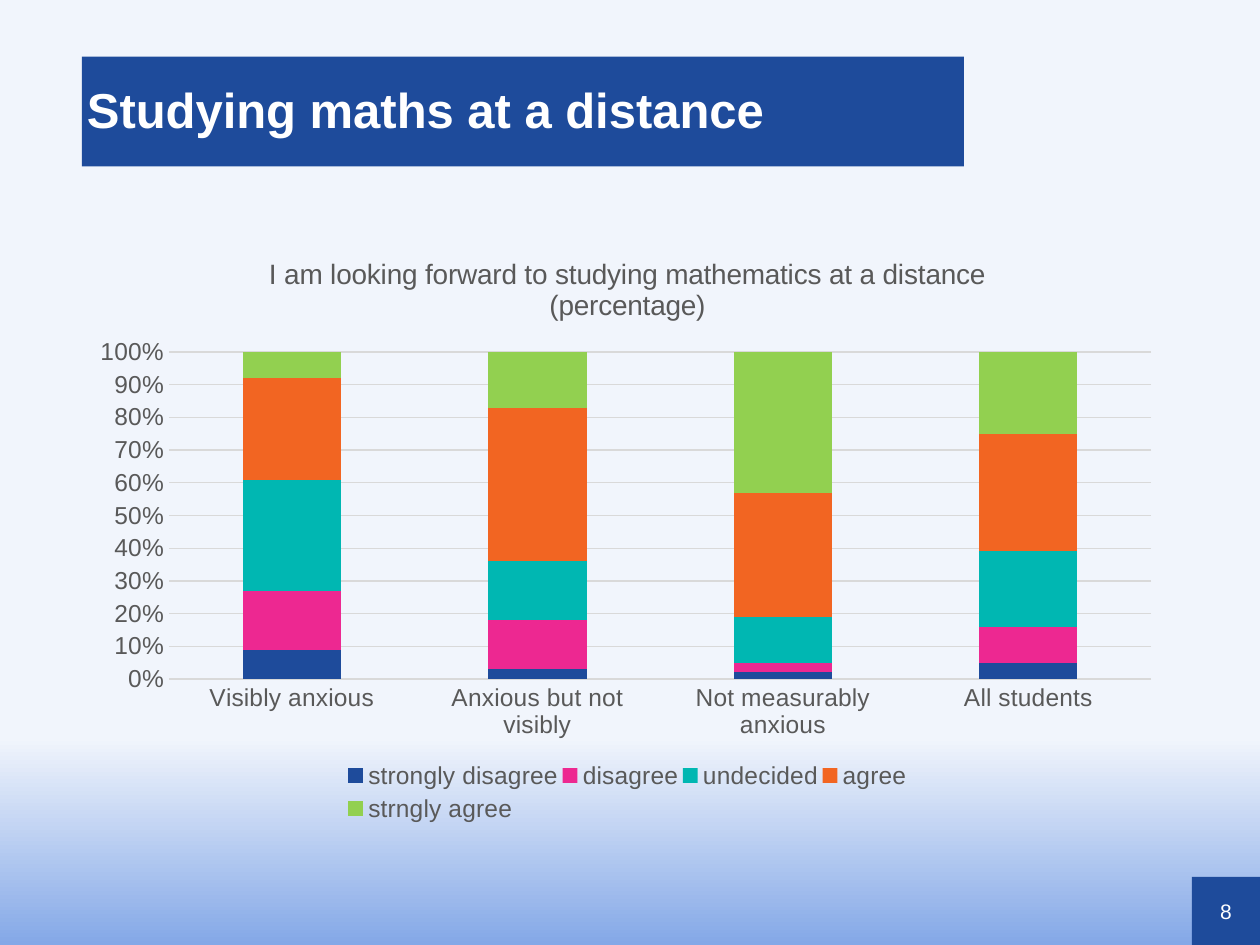
from lxml import etree
from pptx import Presentation
from pptx.chart.data import CategoryChartData
from pptx.dml.color import RGBColor
from pptx.enum import chart as ch, shapes, text
from pptx.oxml.ns import qn
from pptx.util import Inches, Pt

FONT = "Arial"
BLUE, WHITE, GREY, GRID = "1E4B9B", "FFFFFF", "595959", "D9D9D9"

CATEGORIES = ["Visibly anxious", "Anxious but not visibly",
              "Not measurably anxious", "All students"]
ANSWERS = [
    ("strongly disagree", BLUE, [0.09, 0.03, 0.02, 0.05]),
    ("disagree", "ED2891", [0.18, 0.15, 0.03, 0.11]),
    ("undecided", "00B7B2", [0.34, 0.18, 0.14, 0.23]),
    ("agree", "F26522", [0.31, 0.47, 0.38, 0.36]),
    ("strngly agree", "92D050", [0.08, 0.18, 0.44, 0.25]),
]


def rgb(value):
    return RGBColor.from_string(value)


def fill_solid(obj, color):
    obj.fill.solid()
    obj.fill.fore_color.rgb = rgb(color)


def style_font(font, size, color, bold=False):
    font.name, font.size, font.bold = FONT, Pt(size), bold
    font.color.rgb = rgb(color)


def style_line(line, color):
    line.color.rgb = rgb(color)
    line.width = Pt(0.75)


def set_background(s):
    fill = s.background.fill
    fill.gradient()
    fill.gradient_angle = 270
    for stop, (pos, color) in zip(fill.gradient_stops,
                                  [(0.78, "F1F5FC"), (1, "84A8E7")]):
        stop.position = pos
        stop.color.rgb = rgb(color)


def set_text(sp, words, size, bold=False, left=0, top=0):
    tf = sp.text_frame
    tf.word_wrap = True
    tf.vertical_anchor = text.MSO_ANCHOR.MIDDLE
    tf.margin_left, tf.margin_top = Inches(left), Inches(top)
    tf.margin_right = tf.margin_bottom = 0
    tf.text = words
    p = tf.paragraphs[0]
    style_font(p.runs[0].font, size, WHITE, bold)
    return p


def add_title(s, words):
    sp = s.shapes.title
    sp.left, sp.top = Inches(0.65), Inches(0.45)
    sp.width, sp.height = Inches(7), Inches(0.87)
    fill_solid(sp, BLUE)
    p = set_text(sp, words, 28, bold=True, left=0.04, top=0.02)
    p.alignment = text.PP_ALIGN.LEFT
    p.line_spacing = 0.9


def add_page_number(s, number):
    side = Inches(0.54)
    sp = s.shapes.add_shape(shapes.MSO_SHAPE.RECTANGLE,
                            Inches(9.46), Inches(6.96), side, side)
    sp.shadow.inherit = False
    fill_solid(sp, BLUE)
    sp.line.fill.background()
    set_text(sp, number, 12).alignment = text.PP_ALIGN.CENTER


def place(part, index, **values):
    """Give a chart part a manual layout, in fractions of the chart."""
    for old in part.findall(qn("c:layout")):
        part.remove(old)
    layout = etree.Element(qn("c:layout"))
    part.insert(index, layout)
    manual = etree.SubElement(layout, qn("c:manualLayout"))
    for tag, value in values.items():
        etree.SubElement(manual, qn("c:" + tag)).set("val", str(value))


def style_axis(axis):
    axis.major_tick_mark = axis.minor_tick_mark = ch.XL_TICK_MARK.NONE
    style_font(axis.tick_labels.font, 14, GREY)


def add_answer_chart(s, title):
    data = CategoryChartData(number_format="0%")
    data.categories = CATEGORIES
    for name, _, values in ANSWERS:
        data.add_series(name, values)
    chart = s.shapes.add_chart(
        ch.XL_CHART_TYPE.COLUMN_STACKED, Inches(0.65), Inches(1.85),
        Inches(8.66), Inches(4.72), data).chart
    style_font(chart.font, 10, "000000")

    chart.has_title = True
    chart.chart_title.include_in_layout = False
    tf = chart.chart_title.text_frame
    tf.text = title
    style_font(tf.paragraphs[0].runs[0].font, 16, GREY)

    plot = chart.plots[0]
    plot.gap_width, plot.overlap = 150, 100
    plot.vary_by_categories = False
    for series, (_, color, _) in zip(plot.series, ANSWERS):
        fill_solid(series.format, color)

    style_axis(chart.category_axis)
    style_line(chart.category_axis.format.line, GRID)
    axis = chart.value_axis
    style_axis(axis)
    axis.minimum_scale, axis.maximum_scale, axis.major_unit = 0, 1, 0.1
    axis.tick_labels.number_format = "0%"
    axis.tick_labels.number_format_is_linked = False
    axis.format.line.fill.background()
    style_line(axis.major_gridlines.format.line, GRID)

    chart.has_legend = True
    legend = chart.legend
    legend.position = ch.XL_LEGEND_POSITION.BOTTOM
    legend.include_in_layout = False
    style_font(legend.font, 14, GREY)

    root = chart.element
    place(root.find(".//" + qn("c:plotArea")), 0, layoutTarget="inner",
          xMode="edge", yMode="edge", x=0.08, y=0.2, w=0.9, h=0.55)
    place(root.find(".//" + qn("c:legend")), 1,
          xMode="edge", yMode="edge", x=0.24, y=0.88, w=0.52, h=0.12)


def main():
    prs = Presentation()
    prs.slide_width, prs.slide_height = Inches(10), Inches(7.5)
    s = prs.slides.add_slide(prs.slide_layouts[5])
    set_background(s)
    add_page_number(s, "8")
    add_title(s, "Studying maths at a distance")
    add_answer_chart(s, "I am looking forward to studying mathematics "
                        "at a distance (percentage)")
    prs.save("out.pptx")


if __name__ == "__main__":
    main()
